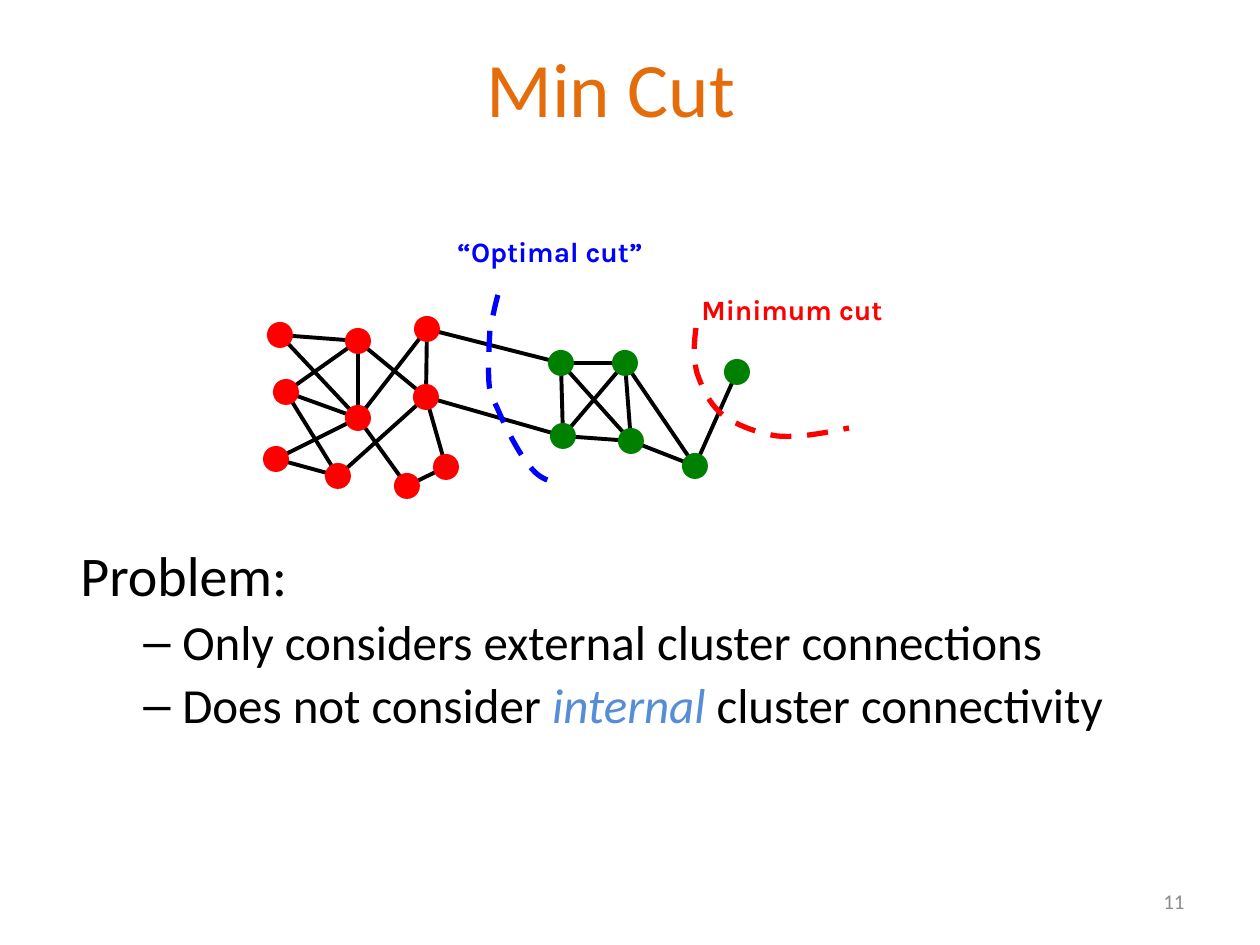
import lxml.etree
import pptx
import pptx.dml.color
import pptx.enum.dml
import pptx.enum.shapes
import pptx.enum.text
import pptx.oxml.ns
import pptx.util

RGB = pptx.dml.color.RGBColor
BLACK = RGB(0, 0, 0)
ORANGE = RGB(0xE4, 0x6C, 0x0A)
AZURE = RGB(0x55, 0x8E, 0xD5)
GRAY = RGB(0x8C, 0x8C, 0x8C)
RED = RGB(0xFF, 0, 0)
GREEN = RGB(0, 0x80, 0)
BLUE = RGB(0, 0, 0xFF)

PX = 914400 // 126
RAD = 13
Pt = pptx.util.Pt
qn = pptx.oxml.ns.qn
ALIGN = pptx.enum.text.PP_ALIGN
MID = pptx.enum.text.MSO_ANCHOR.MIDDLE
TOP = pptx.enum.text.MSO_ANCHOR.TOP


def add_box(left, top, width, height, anchor=TOP, wrap=True):
    box = slide.shapes.add_textbox(left * PX, top * PX, width * PX, height * PX)
    frame = box.text_frame
    frame.word_wrap = wrap
    frame.vertical_anchor = anchor
    return frame


def add_run(para, text, size, color, face="Calibri", bold=False, slant=False):
    run = para.add_run()
    run.text = text
    font = run.font
    font.size = Pt(size)
    font.name = face
    font.bold = bold
    font.italic = slant
    font.color.rgb = color


deck = pptx.Presentation()
deck.slide_width = 1260 * PX
deck.slide_height = 945 * PX
slide = deck.slides.add_slide(deck.slide_layouts[6])

# Title and slide number
title = add_box(44, 8, 1134, 158, MID).paragraphs[0]
title.alignment = ALIGN.CENTER
add_run(title, "Min Cut", 44, ORANGE)

number = add_box(903, 876, 294, 50, MID).paragraphs[0]
number.alignment = ALIGN.RIGHT
add_run(number, "11", 12, GRAY)

# Problem statement: each paragraph is a level and its runs
body = add_box(68, 542, 1134, 229)
points = [
    (0, [("Problem:", BLACK, False)]),
    (1, [("Only considers external cluster connections", BLACK, False)]),
    (1, [("Does not consider ", BLACK, False),
         ("internal", AZURE, True),
         (" cluster connectivity", BLACK, False)]),
]
for row, (level, runs) in enumerate(points):
    para = body.add_paragraph() if row else body.paragraphs[0]
    size = 28 if level else 32
    para.level = level
    para.line_spacing = 0.9
    para.space_before = Pt(size * 0.2)
    for text, color, slant in runs:
        add_run(para, text, size, color, slant=slant)
    if level:
        props = para._p.get_or_add_pPr()
        props.set("marL", str(102 * PX))
        props.set("indent", str(-39 * PX))
        lxml.etree.SubElement(props, qn("a:buFont")).set("typeface", "Arial")
        lxml.etree.SubElement(props, qn("a:buChar")).set("char", "–")

# Graph: node centres, and edges as pairs of node letters
reds = {
    "a": (280, 335), "b": (358, 341), "c": (427, 329), "d": (286, 392),
    "e": (358, 418), "f": (426, 397), "g": (276, 459), "h": (338, 476),
    "i": (407, 486), "j": (446, 467),
}
greens = {
    "k": (561, 363), "l": (625, 363), "m": (563, 436),
    "n": (631, 441), "o": (695, 466), "p": (737, 372),
}
nodes = {**reds, **greens}
edges = ("ab ae bd be bf ce cf de dh eg ei fh fj gh ij "
         "ck fm kl km kn lm ln lo mn no op")

for start, end in edges.split():
    ends = [value * PX for value in nodes[start] + nodes[end]]
    edge = slide.shapes.add_connector(
        pptx.enum.shapes.MSO_CONNECTOR.STRAIGHT, *ends)
    edge.line.color.rgb = BLACK
    edge.line.width = Pt(2.25)
    lxml.etree.SubElement(edge.element.spPr, qn("a:effectLst"))

for name, (x, y) in nodes.items():
    node = slide.shapes.add_shape(
        pptx.enum.shapes.MSO_SHAPE.OVAL,
        (x - RAD) * PX, (y - RAD) * PX, 2 * RAD * PX, 2 * RAD * PX)
    node.shadow.inherit = False
    node.fill.solid()
    node.fill.fore_color.rgb = RED if name in reds else GREEN
    node.line.fill.background()

# Cuts: label, its place, and a curve of a start and Bezier triples
cuts = [
    ("“Optimal cut”", BLUE, (445, 228, 219, 47),
     [(498, 295), (495, 305), (493, 316), (490, 330),
      (489, 345), (488, 369), (489, 383), (490, 396), (493, 398), (499, 412),
      (505, 426), (519, 454), (529, 465), (538, 478), (547, 480), (556, 483)]),
    ("Minimum cut", RED, (689, 286, 209, 47),
     [(696, 328), (694, 343), (693, 358), (697, 373),
      (702, 387), (709, 404), (723, 415), (736, 425), (757, 433), (777, 436),
      (799, 438), (824, 433), (849, 428)]),
]
for text, color, place, curve in cuts:
    label = add_box(*place, wrap=False)
    add_run(label.paragraphs[0], text, 16, color, "Karla", bold=True)

    pen = slide.shapes.build_freeform(*curve[0], scale=PX)
    pen.add_line_segments(curve[1:], close=False)
    cut = pen.convert_to_shape()
    cut.shadow.inherit = False
    cut.fill.background()
    cut.line.color.rgb = color
    cut.line.width = Pt(3)
    cut.line.dash_style = pptx.enum.dml.MSO_LINE.DASH

    # Merge each three line segments into one cubic Bezier
    legs = list(cut.element.iter(qn("a:lnTo")))
    for first in range(0, len(legs), 3):
        bend = lxml.etree.Element(qn("a:cubicBezTo"))
        legs[first].addprevious(bend)
        for leg in legs[first:first + 3]:
            bend.append(leg[0])
            leg.getparent().remove(leg)

deck.save("out.pptx")
